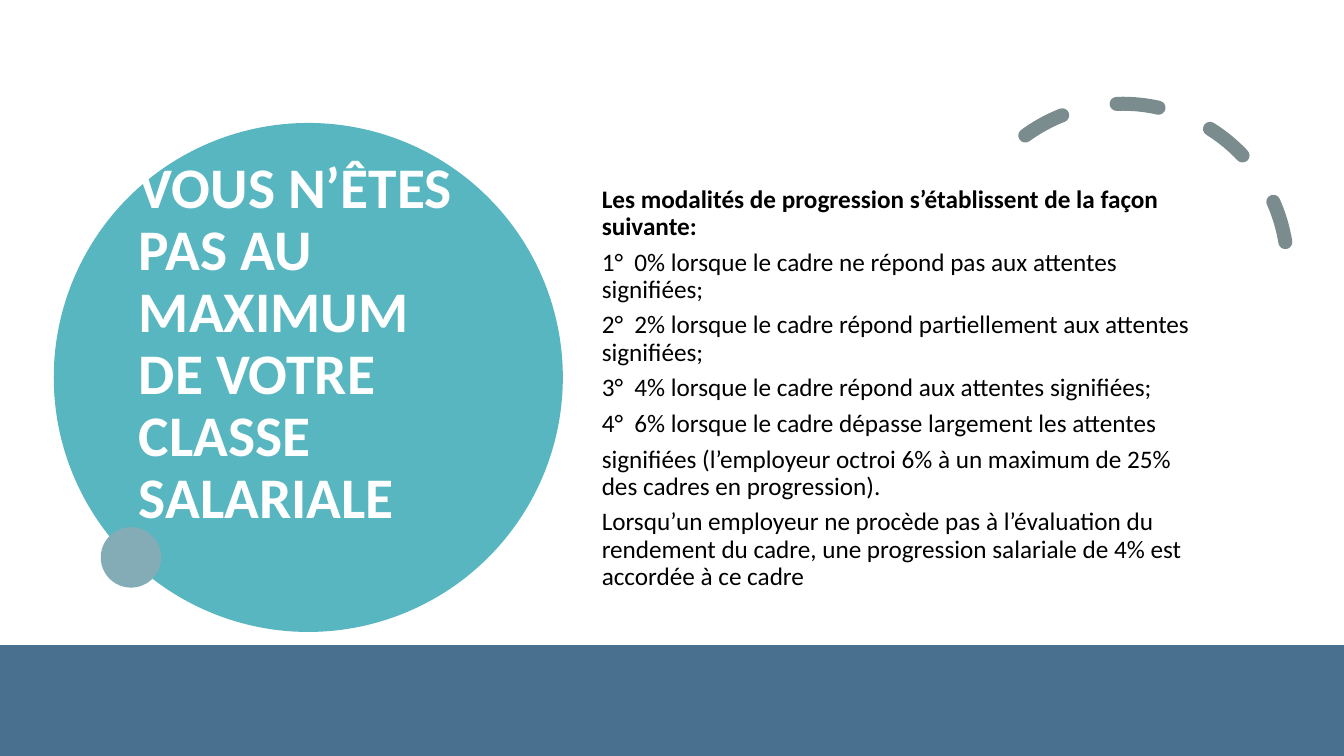
import pptx
import pptx.util
import pptx.dml.color
import pptx.enum.dml
import pptx.enum.shapes
import pptx.enum.text
from lxml import etree

RGBColor = pptx.dml.color.RGBColor
MSO_SHAPE = pptx.enum.shapes.MSO_SHAPE

TEAL = RGBColor(0x58, 0xB6, 0xC0)
GREY_BLUE = RGBColor(0x84, 0xAC, 0xB6)
GREY = RGBColor(0x7A, 0x8C, 0x8E)
NAVY = RGBColor(0x4A, 0x70, 0x90)
WHITE = RGBColor(0xFF, 0xFF, 0xFF)
BLACK = RGBColor(0x00, 0x00, 0x00)

HEADING = "VOUS N’ÊTES PAS AU MAXIMUM DE VOTRE CLASSE SALARIALE"
INTRODUCTION = "Les modalités de progression s’établissent de la façon suivante:"
RULES = [
    "1°  0% lorsque le cadre ne répond pas aux attentes signifiées;",
    "2°  2% lorsque le cadre répond partiellement aux attentes signifiées;",
    "3°  4% lorsque le cadre répond aux attentes signifiées;",
    "4°  6% lorsque le cadre dépasse largement les attentes",
    "signifiées (l’employeur octroi 6% à un maximum de 25% des cadres en progression).",
    "Lorsqu’un employeur ne procède pas à l’évaluation du rendement du cadre, "
    "une progression salariale de 4% est accordée à ce cadre",
]


class SlideBuilder:
    """Places elements by percentages of the slide's width and height."""

    font_name = "Calibri"
    line_spacing = 0.9

    def __init__(self, presentation):
        self.width = presentation.slide_width
        self.height = presentation.slide_height
        self.shapes = presentation.slides.add_slide(presentation.slide_layouts[6]).shapes

    def x(self, percent):
        return round(self.width * percent / 100)

    def y(self, percent):
        return round(self.height * percent / 100)

    def shape(self, kind, left, top, width, height):
        """Add a plain shape; left and top are percentages, the size is in EMU."""
        element = self.shapes.add_shape(kind, self.x(left), self.y(top), width, height)
        element.shadow.inherit = False
        return element

    def filled(self, kind, left, top, width, height, color):
        element = self.shape(kind, left, top, width, height)
        element.fill.solid()
        element.fill.fore_color.rgb = color
        element.line.fill.background()

    def circle(self, left, top, diameter, color):
        """Add a disc whose diameter is a percentage of the slide's width."""
        side = self.x(diameter)
        self.filled(MSO_SHAPE.OVAL, left, top, side, side, color)

    def band(self, top, color):
        """Fill the slide from top down to its lower edge."""
        self.filled(MSO_SHAPE.RECTANGLE, 0, top, self.width, self.y(100 - top), color)

    def dashed_arc(self, left, top, diameter, rotation, angles, color, weight):
        side = self.x(diameter)
        arc = self.shape(MSO_SHAPE.ARC, left, top, side, side)
        arc.adjustments[0], arc.adjustments[1] = angles
        arc.rotation = rotation
        arc.fill.background()
        arc.line.color.rgb = color
        arc.line.width = pptx.util.Pt(weight)
        arc.line.dash_style = pptx.enum.dml.MSO_LINE.DASH
        outline = arc.line._get_or_add_ln()
        outline.set("cap", "rnd")
        etree.SubElement(outline, pptx.oxml.ns.qn("a:round"))

    def text(self, left, top, width, height, paragraphs, size, color,
             space_after=0, inset_top=0.05, inset_bottom=0.05):
        """Write (wording, bold) pairs, one paragraph each; insets are inches."""
        box = self.shapes.add_textbox(self.x(left), self.y(top), self.x(width), self.y(height))
        frame = box.text_frame
        frame.word_wrap = True
        frame.vertical_anchor = pptx.enum.text.MSO_ANCHOR.TOP
        frame.margin_top = pptx.util.Inches(inset_top)
        frame.margin_bottom = pptx.util.Inches(inset_bottom)
        for index, (wording, bold) in enumerate(paragraphs):
            paragraph = frame.add_paragraph() if index else frame.paragraphs[0]
            paragraph.text = wording
            paragraph.line_spacing = self.line_spacing
            paragraph.space_after = pptx.util.Pt(space_after)
            paragraph.font.name = self.font_name
            paragraph.font.size = pptx.util.Pt(size)
            paragraph.font.bold = bold
            paragraph.font.color.rgb = color


def main():
    presentation = pptx.Presentation()
    presentation.slide_width = pptx.util.Inches(13.33)
    presentation.slide_height = pptx.util.Inches(7.5)

    slide = SlideBuilder(presentation)
    slide.circle(4, 16.27, 37.88, TEAL)
    slide.text(9.6, 20.4, 26.56, 59.33, [(HEADING, True)], 41, WHITE)
    slide.dashed_arc(71.27, 13.73, 24.53, 330.2, (158.17, 17.81), GREY, 10)
    slide.circle(7.5, 69.73, 4.5, GREY_BLUE)
    slide.text(44.04, 22.27, 45.39, 57.33,
               [(INTRODUCTION, True)] + [(rule, False) for rule in RULES],
               18, BLACK, space_after=6, inset_top=0.18, inset_bottom=0.17)
    slide.band(85.33, NAVY)
    presentation.save("out.pptx")


if __name__ == "__main__":
    main()
